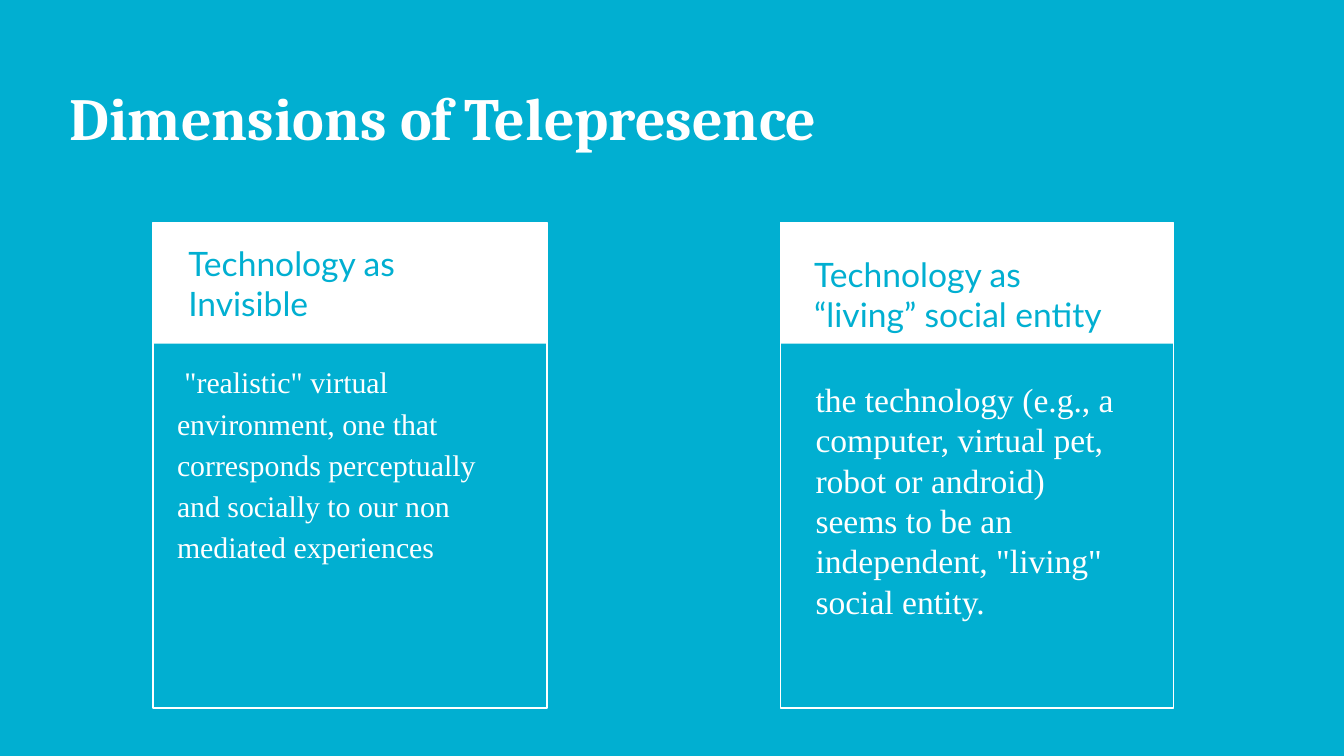
"""Build the slide on the dimensions of telepresence."""
from pptx import Presentation
from pptx.dml.color import RGBColor
from pptx.enum.shapes import MSO_SHAPE
from pptx.enum.text import MSO_ANCHOR
from pptx.util import Pt

HUES = {"blue": "01AFD1", "white": "FFFFFF"}


def rgb(name):
    return RGBColor.from_string(HUES[name])


def add_text(text, spot, font, size, hue, bold=False):
    box = slide.shapes.add_textbox(*map(Pt, spot))
    frame = box.text_frame
    frame.word_wrap = True
    frame.margin_left = frame.margin_right = Pt(7.2)
    frame.margin_top = frame.margin_bottom = Pt(7.2)
    para = frame.paragraphs[0]
    para.text = text
    para.font.name = font
    para.font.size = Pt(size)
    para.font.bold = bold
    para.font.color.rgb = rgb(hue)
    return frame


deck = Presentation()
deck.slide_width, deck.slide_height = Pt(720), Pt(405)
slide = deck.slides.add_slide(deck.slide_layouts[6])
slide.background.fill.solid()
slide.background.fill.fore_color.rgb = rgb("blue")

add_text("Dimensions of Telepresence", (30.3, 36, 659, 54),
         "Cambria", 32, "white", True)

top = 119.4
for left, width in ((82, 211), (418.2, 210.4)):
    card = slide.shapes.add_group_shape()
    for height, solid in ((260, False), (64.8, True)):
        rect = card.shapes.add_shape(
            MSO_SHAPE.RECTANGLE, Pt(left), Pt(top), Pt(width), Pt(height))
        rect.shadow.inherit = False
        if solid:
            rect.fill.solid()
            rect.fill.fore_color.rgb = rgb("white")
            rect.line.fill.background()
        else:
            rect.fill.background()
            rect.line.color.rgb = rgb("white")
            rect.line.width = Pt(0.75)

head = add_text("Technology as Invisible", (93.8, top, 165.6, 64.8),
                "Lato", 18, "blue")
head.vertical_anchor = MSO_ANCHOR.MIDDLE
body = add_text(
    ' "realistic" virtual environment, one that corresponds perceptually '
    "and socially to our non mediated experiences",
    (87.8, 185, 199.4, 187.2), "Times New Roman", 16, "white")
body.paragraphs[0].line_spacing = 1.15
body.paragraphs[0].space_after = Pt(16)

add_text("Technology as “living” social entity", (429.1, 128.9, 183.6, 46),
         "Lato", 18, "blue")
add_text(
    "the technology (e.g., a computer, virtual pet, robot or android) "
    'seems to be an independent, "living" social entity.',
    (429.8, 195.8, 183.6, 151.2), "Times New Roman", 18, "white")

deck.save("out.pptx")
